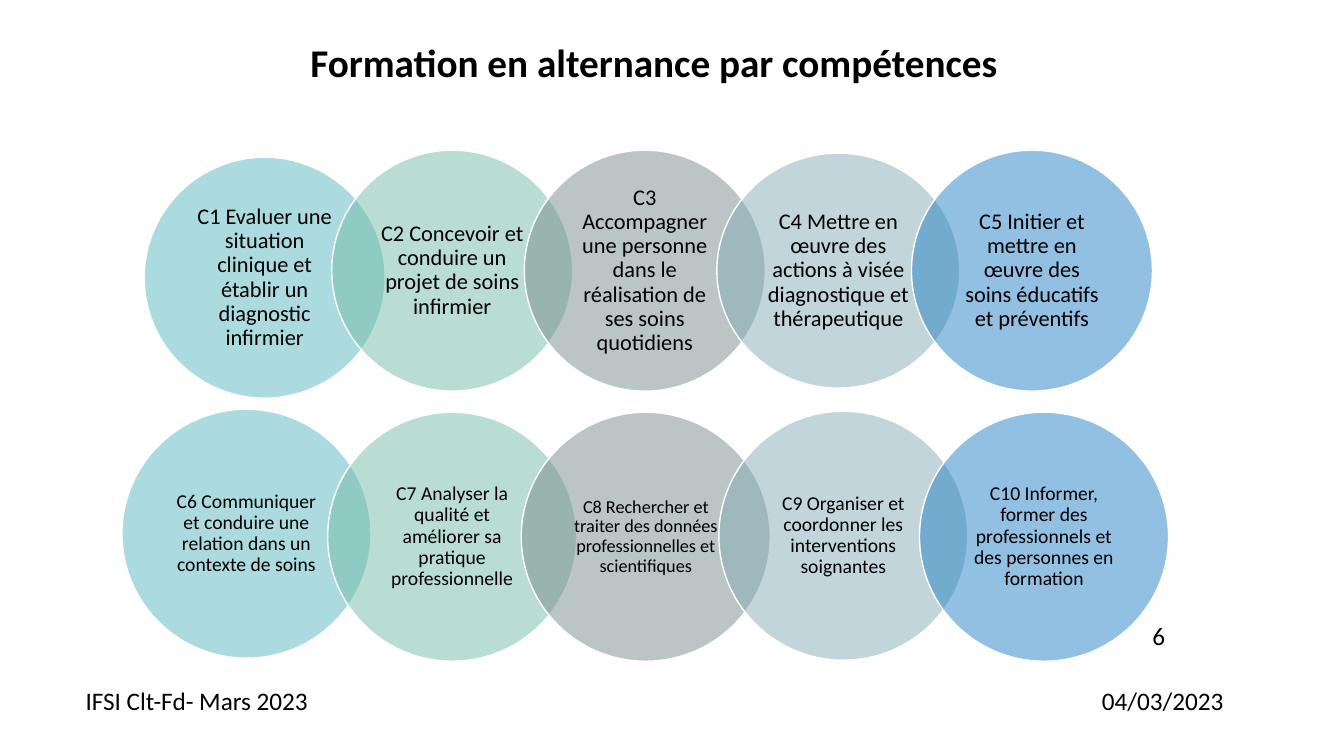
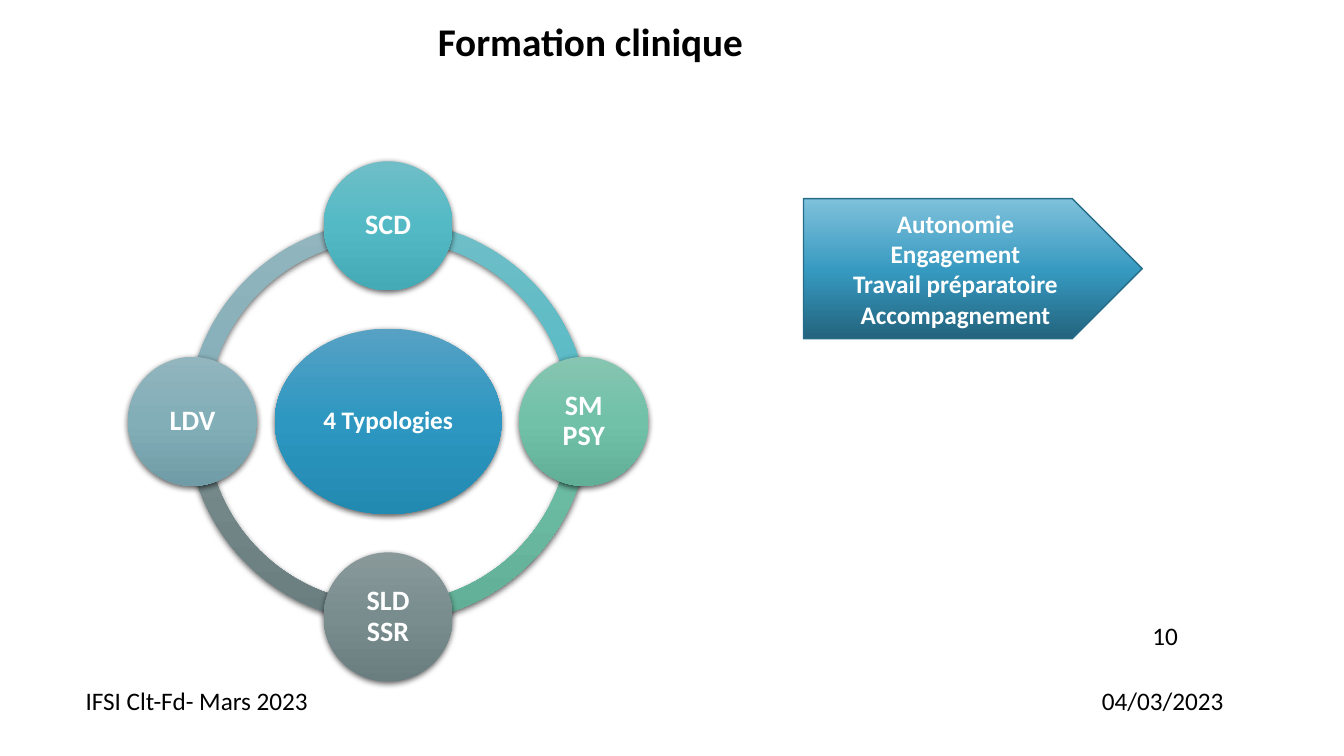
"""Build two slides on nursing training: competences and clinical placements."""
from copy import deepcopy
from math import cos, pi, sin

from lxml.etree import SubElement
from pptx import Presentation
from pptx.dml.color import RGBColor
from pptx.enum.shapes import MSO_SHAPE
from pptx.enum.text import MSO_ANCHOR, PP_ALIGN
from pptx.oxml.ns import qn
from pptx.util import Inches, Pt

BLACK, WHITE = "000000", "FFFFFF"
TITLE = {"size": Pt(28), "bold": True}
FOOTER = {"size": Pt(18)}
LABEL = {"size": Pt(18), "bold": True}
NODE = {"size": Pt(20), "bold": True}
TIGHT = {"line_spacing": 0.9}
CENTRED = {"alignment": PP_ALIGN.CENTER}

COMPETENCE_COLOURS = ["58B6C0", "75BDA7", "7A8C8E", "84ACB6", "2683C6"]
FIRST_ROW = [
    ("C1 Evaluer une situation clinique et établir un diagnostic infirmier", 1.43, 1.56, 2.39, 2.39, 16),
    ("C2 Concevoir et conduire un projet de soins infirmier", 3.29, 1.49, 2.39, 2.39, 16),
    ("C3 Accompagner une personne dans le réalisation de ses soins quotidiens", 5.2, 1.49, 2.39, 2.39, 16),
    ("C4 Mettre en œuvre des actions à visée diagnostique et thérapeutique", 7.11, 1.52, 2.41, 2.33, 16),
    ("C5 Initier et mettre en œuvre des soins éducatifs et préventifs", 9.04, 1.49, 2.39, 2.39, 16),
]
SECOND_ROW = [
    ("C6 Communiquer et conduire une relation dans un contexte de soins", 1.21, 4.06, 2.47, 2.47, 14),
    ("C7 Analyser la qualité et améliorer sa pratique professionnelle", 3.25, 4.09, 2.47, 2.47, 14),
    ("C8 Rechercher et traiter des données professionnelles et scientifiques", 5.17, 4.09, 2.47, 2.47, 13),
    ("C9 Organiser et coordonner les interventions soignantes", 7.13, 4.08, 2.47, 2.47, 14),
    ("C10 Informer, former des professionnels et des personnes en formation", 9.12, 4.09, 2.47, 2.47, 14),
]
PLACEMENTS = [
    ("SCD", ["6FBEC7", "53BAC5", "44AAB5"]),
    ("SM PSY", ["86C5B1", "71C1A8", "61AF97"]),
    ("SLD SSR", ["89999A", "798D8F", "6A7E80"]),
    ("LDV", ["92B5BE", "82AEB8", "709CA7"]),
]
HUB_COLOURS = ["56A1C4", "2D97C1", "2289B1"]
PLATE_COLOURS = ["7FC1DB", "3699C0", "23637D"]
SUPPORTS = ["Autonomie", "Engagement", "Travail préparatoire", "Accompagnement"]


def rgb(value):
    """Turn a hex string into a colour."""
    return RGBColor.from_string(value)


def set_format(obj, values):
    """Set attributes from a dict of format values."""
    for name, value in values.items():
        setattr(obj, name, value)


def write(tf, lines, font, colour=BLACK, para=None, margins=(0.1, 0.05)):
    """Write one paragraph per line in a wrapped text frame."""
    side, edge = (Inches(m) for m in margins)
    set_format(tf, {"word_wrap": True, "margin_left": side, "margin_right": side,
                    "margin_top": edge, "margin_bottom": edge})
    for i, line in enumerate(lines):
        p = tf.paragraphs[0] if i == 0 else tf.add_paragraph()
        set_format(p, para or {})
        r = p.add_run()
        r.text = line
        set_format(r.font, {"name": "Calibri", **font})
        r.font.color.rgb = rgb(colour)


def add_text(s, box, text, font, para=None):
    """Add a text box."""
    sp = s.shapes.add_textbox(*map(Inches, box))
    write(sp.text_frame, [text], font, para=para)


def add_flat_shape(s, kind, box):
    """Add a preset shape without shadow or line, its text in the middle."""
    sp = s.shapes.add_shape(kind, *map(Inches, box))
    sp.shadow.inherit = False
    sp.line.fill.background()
    sp.text_frame.vertical_anchor = MSO_ANCHOR.MIDDLE
    return sp


def add_line(sp, colour):
    """Give a shape a one-point outline."""
    sp.line.color.rgb = rgb(colour)
    sp.line.width = Pt(1)


def fill_gradient(sp, colours, middle=0.5):
    """Fill a shape from top to bottom with three colours."""
    sp.fill.gradient()
    sp.fill.gradient_angle = 270
    stops = sp._element.spPr.find(qn("a:gradFill")).find(qn("a:gsLst"))
    stops.append(deepcopy(stops[0]))
    for stop, colour, position in zip(sp.fill.gradient_stops, colours, (0, middle, 1)):
        stop.color.rgb = rgb(colour)
        stop.position = position


def add_shadow(sp):
    """Cast a soft shadow below a shape."""
    effects = sp._element.spPr.find(qn("a:effectLst"))
    shadow = SubElement(effects, qn("a:outerShdw"), blurRad=str(Pt(4.5)),
                        dist=str(Pt(1.5)), dir="5400000", rotWithShape="0")
    colour = SubElement(shadow, qn("a:srgbClr"), val=BLACK)
    SubElement(colour, qn("a:alpha"), val="63000")


def add_raised_shape(s, kind, centre, size, colours):
    """Add a gradient shape with a shadow around a centre."""
    (x, y), (w, h) = centre, size
    sp = add_flat_shape(s, kind, (x - w / 2, y - h / 2, w, h))
    fill_gradient(sp, colours)
    add_shadow(sp)
    return sp


def add_competence(s, text, left, top, width, height, size, colour):
    """Add a half-transparent competence circle."""
    sp = add_flat_shape(s, MSO_SHAPE.OVAL, (left, top, width, height))
    sp.fill.solid()
    sp.fill.fore_color.rgb = rgb(colour)
    tint = sp._element.spPr.find(qn("a:solidFill")).find(qn("a:srgbClr"))
    SubElement(tint, qn("a:alpha"), val="50000")
    add_line(sp, WHITE)
    write(sp.text_frame, [text], {"size": Pt(size)}, para={**TIGHT, **CENTRED}, margins=(0.13, 0.02))


def add_typology_wheel(s, centre, radius):
    """Add a ring of placements around a central hub."""
    style = {"colour": WHITE, "para": {**TIGHT, **CENTRED}, "margins": (0.03, 0.03)}
    quarter = 54
    for i, (_, colours) in reversed(list(enumerate(PLACEMENTS))):
        arc = add_raised_shape(s, MSO_SHAPE.BLOCK_ARC, centre, (3.98, 3.98), colours)
        start = (i + 3) % 4 * quarter
        for k, value in enumerate((start, (start + quarter) % (4 * quarter), 0.046)):
            arc.adjustments[k] = value
    hub = add_raised_shape(s, MSO_SHAPE.OVAL, centre, (2.25, 1.84), HUB_COLOURS)
    write(hub.text_frame, ["4 Typologies"], LABEL, **style)
    for i, (name, colours) in enumerate(PLACEMENTS):
        angle = i * pi / 2
        spot = (centre[0] + radius * sin(angle), centre[1] - radius * cos(angle))
        node = add_raised_shape(s, MSO_SHAPE.OVAL, spot, (1.28, 1.28), colours)
        write(node.text_frame, [name], NODE, **style)


def add_support_plate(s):
    """Add the arrow-shaped plate listing the supports."""
    sp = add_flat_shape(s, MSO_SHAPE.PENTAGON, (7.97, 1.97, 3.36, 1.39))
    fill_gradient(sp, PLATE_COLOURS, 0.52)
    add_line(sp, "266D8A")
    write(sp.text_frame, SUPPORTS, LABEL, WHITE, CENTRED)


def add_slide(prs, title, box, number, para=TIGHT):
    """Add a blank slide with title, date, number and footer."""
    s = prs.slides.add_slide(prs.slide_layouts[6])
    add_text(s, box, title, TITLE, para)
    add_text(s, (10.83, 6.75, 1.75, 0.4), "04/03/2023", FOOTER)
    add_text(s, (11.33, 6.1, 1.25, 0.73), str(number), FOOTER)
    add_text(s, (0.75, 6.75, 8.25, 0.4), "IFSI Clt-Fd- Mars 2023", FOOTER)
    return s


def main():
    """Build and save the presentation."""
    prs = Presentation()
    set_format(prs, {"slide_width": Inches(13.33), "slide_height": Inches(7.5)})

    s = add_slide(prs, "Formation en alternance par compétences", (2.98, 0.38, 9.77, 0.99), 6)
    for row in (FIRST_ROW, SECOND_ROW):
        for competence, colour in zip(row, COMPETENCE_COLOURS):
            add_competence(s, *competence, colour)

    s = add_slide(prs, "Formation clinique", (1.19, 0.18, 9.33, 1.65), 10, {**TIGHT, **CENTRED})
    add_typology_wheel(s, (3.85, 4.18), 1.94)
    add_support_plate(s)

    prs.save("out.pptx")


if __name__ == "__main__":
    main()
